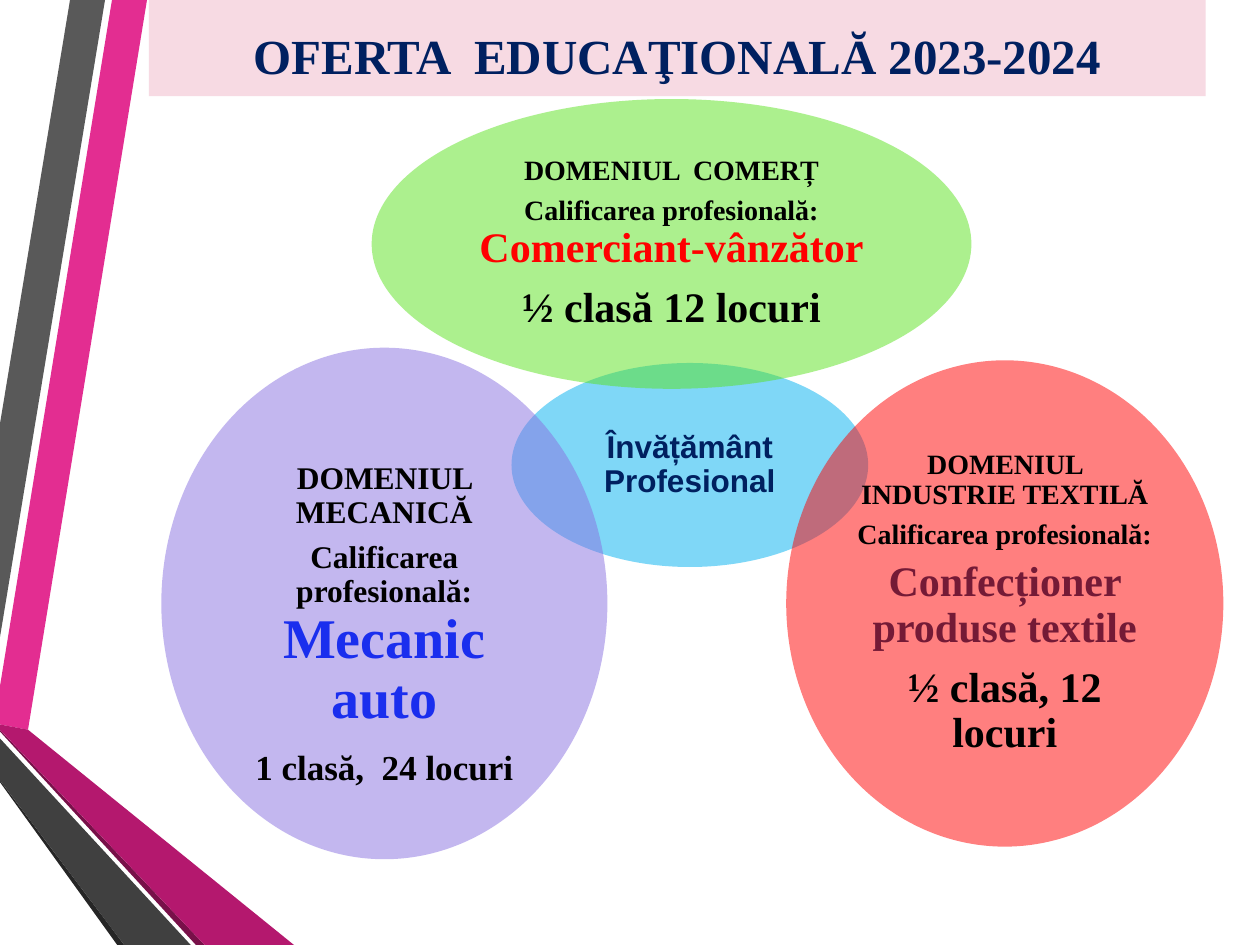
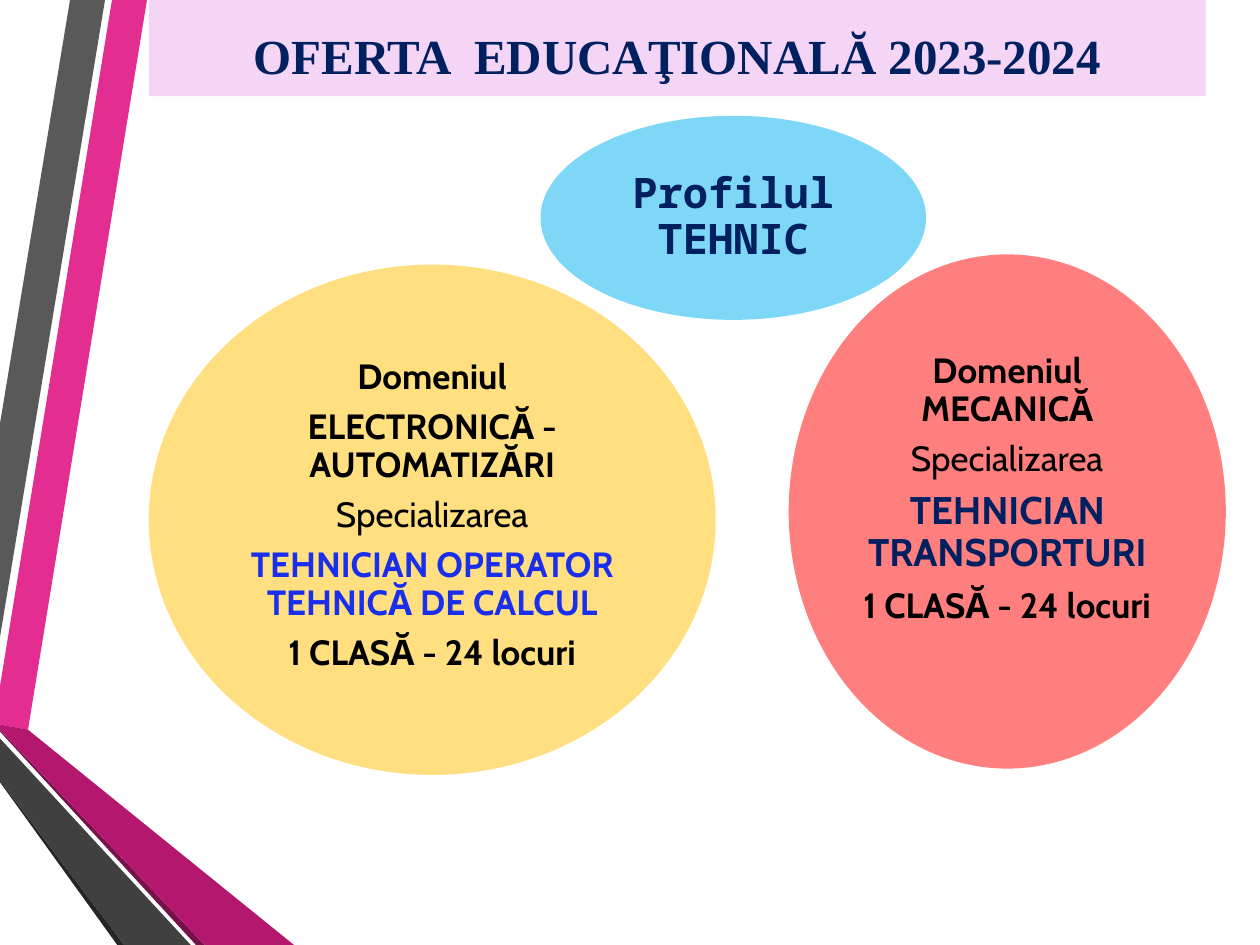
from dataclasses import dataclass

from lxml.etree import SubElement
from pptx import Presentation
from pptx.dml.color import RGBColor
from pptx.enum.shapes import MSO_SHAPE
from pptx.enum.text import MSO_ANCHOR, MSO_AUTO_SIZE, PP_ALIGN
from pptx.oxml.ns import qn
from pptx.util import Pt

COLORS = {
    "pink": "E32D91", "gray": "595959", "near_black": "262626", "plum": "781049",
    "magenta": "B4186E", "charcoal": "404040", "rose": "F7DAE3", "lilac": "F4D5F5",
    "sky": "00B0F0", "green": "5BE21E", "red": "FF0000", "violet": "8971E1",
    "amber": "FFC000", "navy": "002060", "blue": "1A2EEE", "wine": "741A36",
    "black": "000000",
}
SERIF, SANS, MONO, CABIN = "Times New Roman", "Arial", "Noto Sans Mono", "Cabin"
TITLE = "OFERTA  EDUCAŢIONALĂ 2023-2024"
OPACITY = "50000"
FRAME = {"word_wrap": True, "auto_size": MSO_AUTO_SIZE.NONE,
         "vertical_anchor": MSO_ANCHOR.MIDDLE}


@dataclass(frozen=True)
class Band:
    color: str
    points: tuple[tuple[float, float], ...]


@dataclass(frozen=True)
class Run:
    text: str
    size: float
    color: str = "black"
    bold: bool = True


@dataclass(frozen=True)
class Bubble:
    box: tuple[float, float, float, float]
    color: str
    font: str
    paragraphs: tuple[tuple[Run, ...], ...]
    top: float = 2
    bottom: float = 2


@dataclass(frozen=True)
class Offer:
    title_fill: str
    bubbles: tuple[Bubble, ...]


BANDS = (
    Band("pink", ((0, 392), (0, 414), (16, 417), (84, 0), (64, 0))),
    Band("gray", ((60, 0), (40, 0), (0, 242), (0, 364))),
    Band("near_black", ((0, 446), (0, 447), (67, 540), (71, 540))),
    Band("plum", ((0, 417), (0, 418), (112, 540), (117, 540))),
    Band("magenta", ((0, 417), (117, 540), (168, 540), (16, 417), (0, 414))),
    Band("charcoal", ((0, 446), (71, 540), (109, 540), (0, 422))),
)

OFFERS = (
    Offer("rose", (
        Bubble((292.3, 207.4, 203.8, 116.6), "sky", SANS, (
            (Run("Învățământ Profesional", 18, "navy"),),
        )),
        Bubble((212.4, 56.6, 342.7, 165.6), "green", SERIF, (
            (Run("DOMENIUL  COMERȚ", 16),),
            (Run("Calificarea profesională: ", 16),
             Run("Comerciant-vânzător", 24, "red")),
            (Run("½ clasă 12 locuri", 24),),
        )),
        Bubble((449.3, 205.9, 249.8, 277.9), "red", SERIF, (
            (Run("DOMENIUL INDUSTRIE TEXTILĂ", 16),),
            (Run("Calificarea profesională:", 16),),
            (Run("Confecționer produse textile", 24, "wine"),),
            (Run("½ clasă, 12 locuri", 24),),
        )),
        Bubble((92.2, 198.7, 254.9, 292.3), "violet", SERIF, (
            (Run("DOMENIUL MECANICĂ", 18),),
            (Run("Calificarea profesională: ", 18),
             Run("Mecanic auto", 32, "blue")),
            (Run("1 clasă,  24 locuri", 20),),
        ), top=25, bottom=0),
    )),
    Offer("lilac", (
        Bubble((308.9, 66.2, 220.3, 116.6), "sky", MONO, (
            (Run("Profilul TEHNIC", 24, "navy"),),
        )),
        Bubble((450.7, 145.4, 249.8, 293.8), "red", CABIN, (
            (Run("Domeniul MECANICĂ", 20),),
            (Run("Specializarea", 20, bold=False),),
            (Run("TEHNICIAN TRANSPORTURI", 22, "navy"),),
            (Run("1 CLASĂ - 24 locuri", 20),),
        ), bottom=27),
        Bubble((85, 151.2, 324, 291.6), "amber", CABIN, (
            (Run("Domeniul", 20),),
            (Run("ELECTRONICĂ - AUTOMATIZĂRI", 20),),
            (Run("Specializarea", 20, bold=False),),
            (Run("TEHNICIAN OPERATOR TEHNICĂ DE CALCUL", 20, "blue"),),
            (Run("1 CLASĂ - 24 locuri", 20),),
        ), bottom=6),
    )),
)


def rgb(name: str) -> RGBColor:
    return RGBColor.from_string(COLORS[name])


def apply(target, values: dict) -> None:
    for name, value in values.items():
        setattr(target, name, value)


def paint(sp, color: str) -> None:
    sp.fill.solid()
    sp.fill.fore_color.rgb = rgb(color)
    sp.line.fill.background()


def add_run(p, run: Run, font: str) -> None:
    r = p.add_run()
    r.text = run.text
    apply(r.font, {"name": font, "size": Pt(run.size), "bold": run.bold})
    r.font.color.rgb = rgb(run.color)


def add_band(slide, band: Band) -> None:
    start, *rest = band.points
    builder = slide.shapes.build_freeform(*start, scale=Pt(1))
    builder.add_line_segments(rest, close=True)
    sp = builder.convert_to_shape()
    sp.shadow.inherit = False
    paint(sp, band.color)


def add_bubble(slide, bubble: Bubble) -> None:
    sp = slide.shapes.add_shape(MSO_SHAPE.OVAL, *map(Pt, bubble.box))
    sp.shadow.inherit = False
    paint(sp, bubble.color)
    color = next(sp.fill._xPr.iter(qn("a:srgbClr")))
    SubElement(color, qn("a:alpha"), val=OPACITY)
    tf = sp.text_frame
    apply(tf, FRAME | {"margin_left": Pt(2), "margin_right": Pt(2),
                       "margin_top": Pt(bubble.top), "margin_bottom": Pt(bubble.bottom)})
    for i, runs in enumerate(bubble.paragraphs):
        p = tf.add_paragraph() if i else tf.paragraphs[0]
        gap = 0.35 * max(run.size for run in runs)
        apply(p, {"alignment": PP_ALIGN.CENTER, "line_spacing": 0.9,
                  "space_after": Pt(gap)})
        for run in runs:
            add_run(p, run, bubble.font)


def format_title(slide, fill: str) -> None:
    sp = slide.shapes.title
    apply(sp, {"left": Pt(85), "top": Pt(-2), "width": Pt(604), "height": Pt(57)})
    paint(sp, fill)
    tf = sp.text_frame
    apply(tf, FRAME | {"margin_top": Pt(12.8), "margin_bottom": Pt(3.6)})
    p = tf.paragraphs[0]
    p.alignment = PP_ALIGN.CENTER
    add_run(p, Run(TITLE, 28, "navy"), SERIF)


def main() -> None:
    prs = Presentation()
    apply(prs, {"slide_width": Pt(720), "slide_height": Pt(540)})
    for offer in OFFERS:
        slide = prs.slides.add_slide(prs.slide_layouts[5])
        format_title(slide, offer.title_fill)
        for band in BANDS:
            add_band(slide, band)
        for bubble in offer.bubbles:
            add_bubble(slide, bubble)
    prs.save("out.pptx")


if __name__ == "__main__":
    main()
